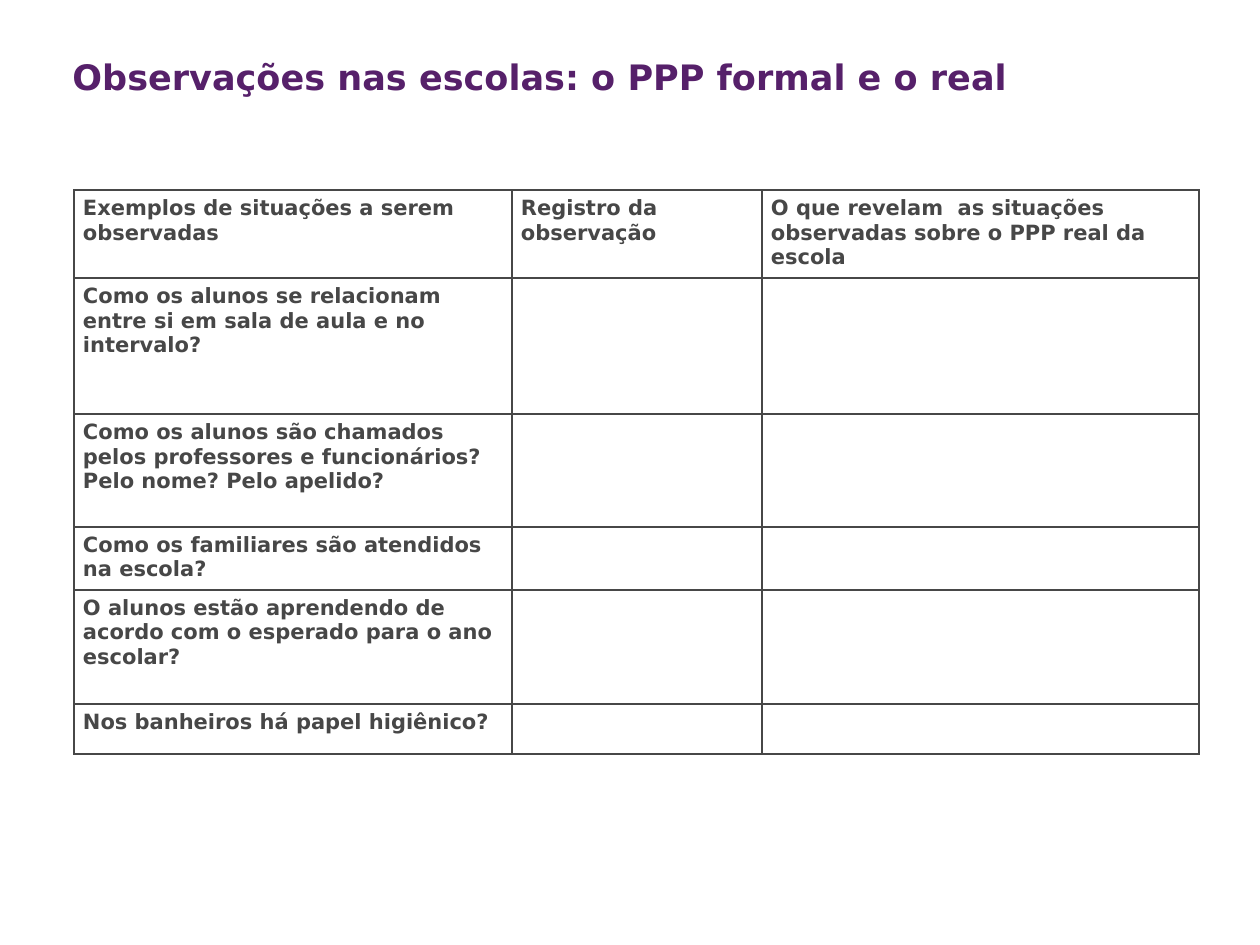
from lxml import etree
from pptx import Presentation
from pptx import util as u
from pptx.dml import color
from pptx.enum import text
from pptx.oxml import ns

COLORS = {"title": "56206A", "ink": "474747", "paper": "FFFFFF"}
HEADERS = [
    "Exemplos de situações a serem observadas",
    "Registro da observação",
    "O que revelam  as situações observadas sobre o PPP real da escola",
]
SITUATIONS = [
    "Como os alunos se relacionam entre si em sala de aula e no intervalo?",
    "Como os alunos são chamados pelos professores e funcionários? Pelo nome? Pelo apelido?",
    "Como os familiares são atendidos na escola?",
    "O alunos estão aprendendo de acordo com o esperado para o ano escolar?",
    "Nos banheiros há papel higiênico?",
]
COL_WIDTHS = [438, 250, 437]
ROW_HEIGHTS = [88, 136, 113, 63, 114, 50]


class Deck:
    font = "DejaVu Sans"
    scale = 914400 / 126

    def __init__(self, width, height):
        self.prs = Presentation()
        self.prs.slide_width = self.px(width)
        self.prs.slide_height = self.px(height)
        self.s = self.prs.slides.add_slide(self.prs.slide_layouts[6])

    def px(self, n):
        return u.Emu(round(n * self.scale))

    def rgb(self, name):
        return color.RGBColor.from_string(COLORS[name])

    def run(self, p, words, size, ink):
        r = p.add_run()
        r.text = words
        r.font.name = self.font
        r.font.size = u.Pt(size)
        r.font.bold = True
        r.font.color.rgb = self.rgb(ink)

    def title(self, words, x, y, w, h):
        sp = self.s.shapes.add_textbox(*map(self.px, (x, y, w, h)))
        tf = sp.text_frame
        tf.word_wrap = True
        tf.vertical_anchor = text.MSO_ANCHOR.TOP
        self.run(tf.paragraphs[0], words, 20, "title")

    def borders(self, cell):
        tc_pr = cell._tc.get_or_add_tcPr()
        for side in ("lnL", "lnR", "lnT", "lnB"):
            ln = etree.SubElement(tc_pr, ns.qn(f"a:{side}"), w=str(u.Pt(1)))
            fill = etree.SubElement(ln, ns.qn("a:solidFill"))
            etree.SubElement(fill, ns.qn("a:srgbClr"), val=COLORS["ink"])

    def cell(self, cell, words):
        cell.margin_left = cell.margin_right = self.px(9)
        cell.margin_top = cell.margin_bottom = self.px(6)
        self.borders(cell)
        cell.fill.solid()
        cell.fill.fore_color.rgb = self.rgb("paper")
        p = cell.text_frame.paragraphs[0]
        if words:
            self.run(p, words, 12, "ink")
        else:
            p.font.size = u.Pt(12)

    def table(self, rows, x, y, widths, heights):
        box = map(self.px, (x, y, sum(widths), sum(heights)))
        table = self.s.shapes.add_table(len(heights), len(widths), *box).table
        table.first_row = table.horz_banding = False
        for col, width in zip(table.columns, widths):
            col.width = self.px(width)
        for row, height, entries in zip(table.rows, heights, rows):
            row.height = self.px(height)
            for cell, words in zip(row.cells, entries):
                self.cell(cell, words)


def main():
    deck = Deck(1260, 945)
    rows = [HEADERS] + [[situation, "", ""] for situation in SITUATIONS]
    deck.table(rows, 74, 190, COL_WIDTHS, ROW_HEIGHTS)
    deck.title("Observações nas escolas: o PPP formal e o real", 60, 49, 1140, 100)
    deck.prs.save("out.pptx")


if __name__ == "__main__":
    main()
